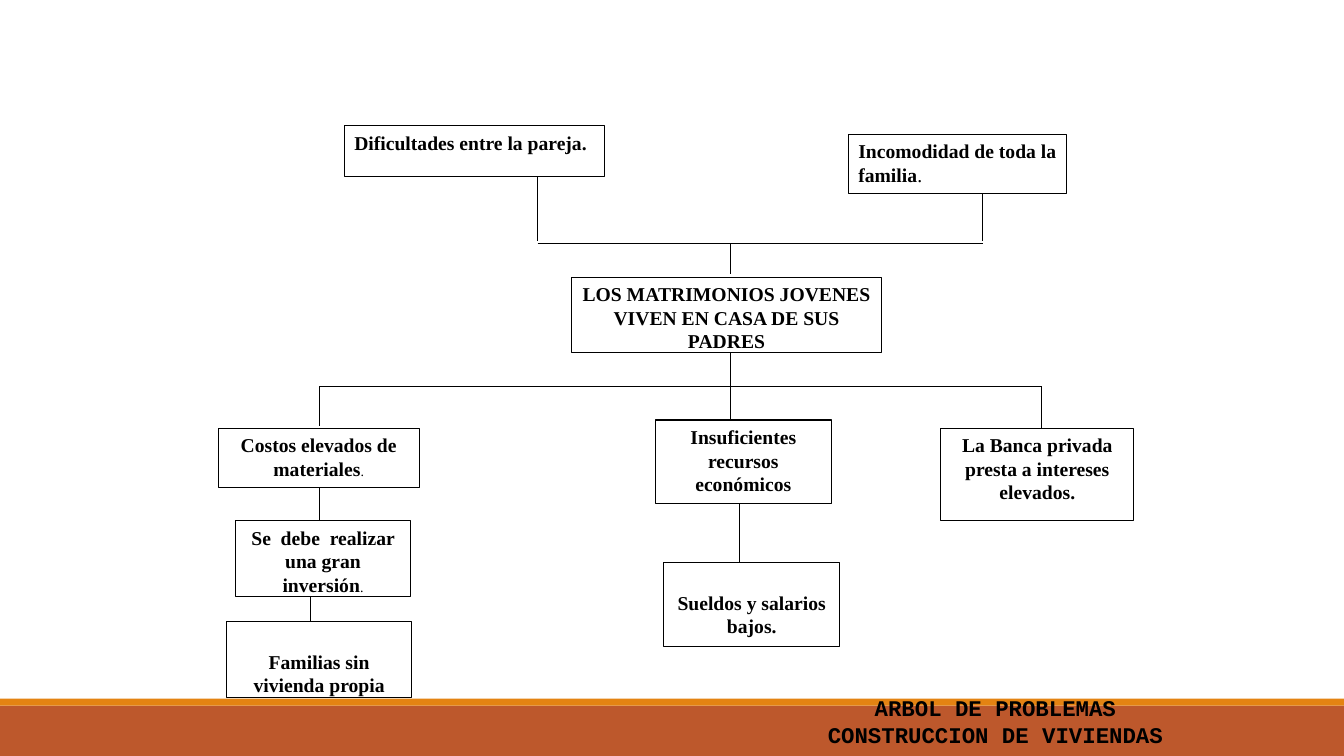
from dataclasses import dataclass

from lxml.etree import SubElement
from pptx import Presentation
from pptx.dml.color import RGBColor
from pptx.enum.shapes import MSO_CONNECTOR, MSO_SHAPE
from pptx.enum.text import MSO_ANCHOR, PP_ALIGN
from pptx.oxml.ns import qn
from pptx.util import Pt


@dataclass(frozen=True)
class Theme:
    ink: RGBColor = RGBColor(0, 0, 0)
    paper: RGBColor = RGBColor(255, 255, 255)
    band: RGBColor = RGBColor(0xBD, 0x58, 0x2C)
    stripe: RGBColor = RGBColor(0xE4, 0x83, 0x12)
    card_font: str = "Times New Roman"
    title_font: str = "Courier New"
    card_size: float = 14
    small_size: float = 10
    title_size: float = 16
    line_width: float = 0.75
    inset: float = 3.6
    low_inset: float = 20


@dataclass(frozen=True)
class Box:
    left: float
    top: float
    width: float
    height: float

    def inner(self, left, top, width, height):
        return Box(self.left + left, self.top + top, width, height)

    def points(self):
        return Pt(self.left), Pt(self.top), Pt(self.width), Pt(self.height)


THEME = Theme()


def style_run(run, font_name, size, bold=True):
    run.font.name = font_name
    run.font.size = Pt(size)
    run.font.bold = bold
    run.font.color.rgb = THEME.ink


def add_rect(slide, box, fill):
    rect = slide.shapes.add_shape(MSO_SHAPE.RECTANGLE, *box.points())
    rect.shadow.inherit = False
    rect.fill.solid()
    rect.fill.fore_color.rgb = fill
    rect.line.fill.background()
    return rect


def add_card(slide, box, text, align=PP_ALIGN.CENTER, inset=THEME.inset,
             stop_size=None):
    card = add_rect(slide, box, THEME.paper)
    card.line.color.rgb = THEME.ink
    card.line.width = Pt(THEME.line_width)
    frame = card.text_frame
    frame.word_wrap = True
    frame.vertical_anchor = MSO_ANCHOR.TOP
    frame.margin_top = Pt(inset)
    frame.margin_bottom = 0
    frame.text = text
    paragraph = frame.paragraphs[0]
    paragraph.alignment = align
    style_run(paragraph.runs[0], THEME.card_font, THEME.card_size)
    if stop_size:
        stop = paragraph.add_run()
        stop.text = "."
        style_run(stop, THEME.card_font, stop_size, bold=False)


def add_link(slide, box, x1, y1, x2, y2):
    link = slide.shapes.add_connector(
        MSO_CONNECTOR.STRAIGHT,
        Pt(box.left + x1), Pt(box.top + y1), Pt(box.left + x2), Pt(box.top + y2))
    link.line.color.rgb = THEME.ink
    link.line.width = Pt(THEME.line_width)
    SubElement(link._element.spPr, qn("a:effectLst"))


def add_stems(slide, box, stems):
    for x, start, end in stems:
        add_link(slide, box, x, start, x, end)


def draw_effects(slide, box):
    couple, family, core, bar = 138, 456, 276, 84
    add_link(slide, box, couple, bar, family, bar)
    add_stems(slide, box, [(couple, 36, 82), (family, 48, 82), (core, bar, 106)])
    add_card(slide, box.inner(0, 0, 186, 36), "Dificultades entre la pareja.",
             PP_ALIGN.LEFT)
    add_card(slide, box.inner(360, 6, 156, 42), "Incomodidad de toda la familia",
             PP_ALIGN.LEFT, stop_size=THEME.card_size)


def draw_core_problem(slide, box):
    add_card(slide, box, "LOS MATRIMONIOS JOVENES VIVEN EN CASA DE SUS PADRES")
    add_stems(slide, box, [(114, box.height, box.height + 27)])


def draw_causes(slide, box):
    costs, income, bank = 72, 366, 588
    add_link(slide, box, costs, 0, bank, 0)
    add_stems(slide, box, [
        (costs, 0, 28), (income, 0, 24), (bank, 0, 30),
        (costs, 72, 96), (costs - 6, 150, 170), (income + 6, 84, 126),
    ])
    small, low = THEME.small_size, THEME.low_inset
    add_card(slide, box.inner(0, 30, 143.5, 42), "Costos elevados de materiales",
             stop_size=small)
    add_card(slide, box.inner(12, 96, 125.5, 54),
             "Se  debe  realizar una gran inversión", stop_size=small)
    add_card(slide, box.inner(6, 168, 132, 54), "Familias sin vivienda propia",
             inset=low)
    add_card(slide, box.inner(312, 24, 126, 60), "Insuficientes recursos económicos")
    add_card(slide, box.inner(318, 126, 126, 60), "Sueldos y salarios bajos.",
             inset=low)
    add_card(slide, box.inner(516, 30, 138, 66),
             "La Banca privada presta a intereses elevados.")


def draw_footer(slide, box):
    stripe_height = 5
    add_rect(slide, box.inner(0, stripe_height, box.width, box.height - stripe_height),
             THEME.band)
    add_rect(slide, box.inner(0, 0, box.width, stripe_height), THEME.stripe)
    title = slide.shapes.add_textbox(*box.inner(582, -3, 258, 44).points())
    frame = title.text_frame
    frame.word_wrap = True
    frame.margin_top = frame.margin_bottom = 0
    frame.text = "ARBOL DE PROBLEMAS\nCONSTRUCCION DE VIVIENDAS"
    for paragraph in frame.paragraphs:
        paragraph.alignment = PP_ALIGN.CENTER
        style_run(paragraph.runs[0], THEME.title_font, THEME.title_size)


def main():
    deck = Presentation()
    deck.slide_width, deck.slide_height = Pt(960), Pt(540)
    slide = deck.slides.add_slide(deck.slide_layouts[6])
    draw_footer(slide, Box(0, 499, 960, 41))
    draw_effects(slide, Box(246, 90, 516, 106))
    draw_core_problem(slide, Box(408, 198, 222, 54))
    draw_causes(slide, Box(156, 276, 654, 222))
    deck.save("out.pptx")


if __name__ == "__main__":
    main()
